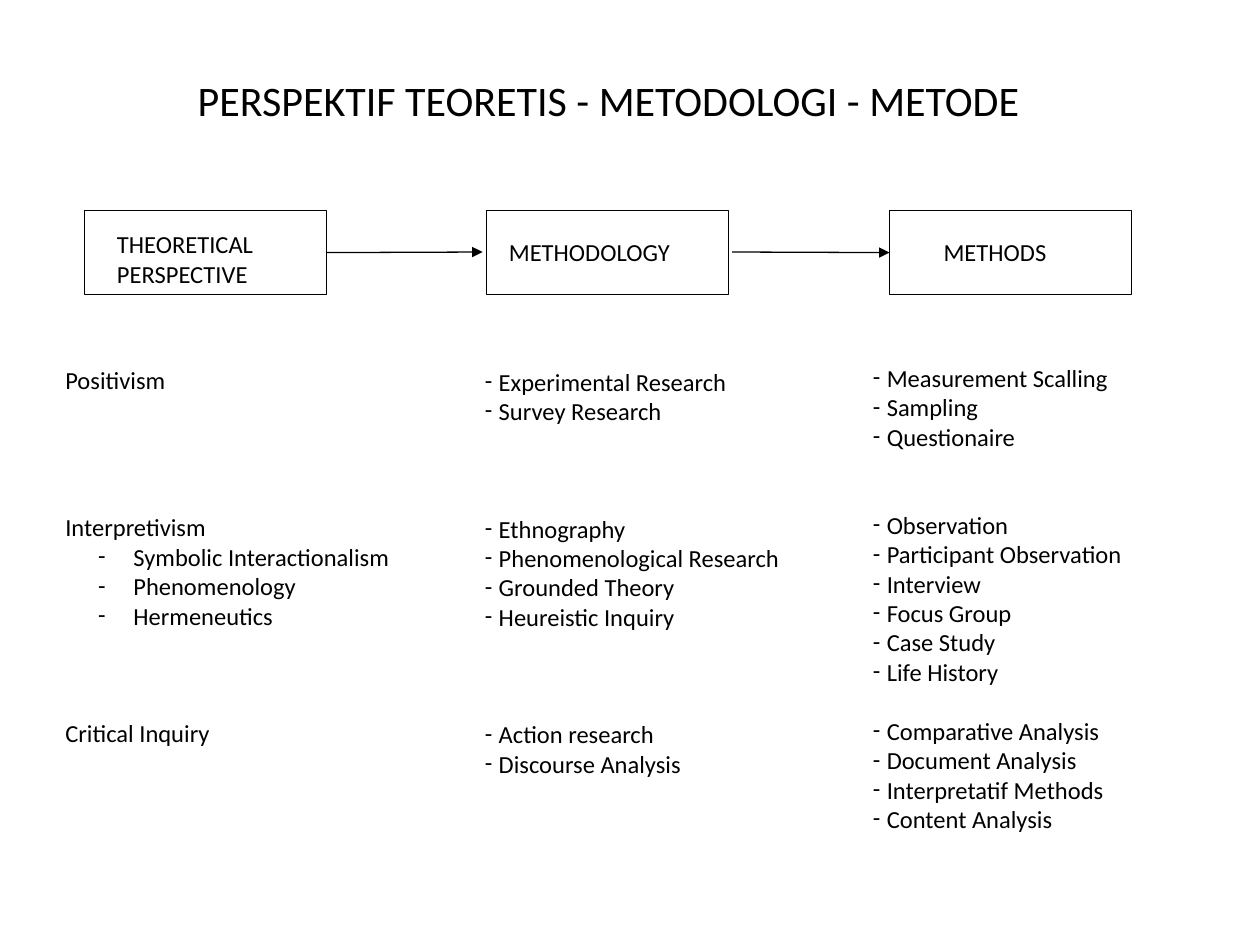
from lxml import etree
from pptx import Presentation
from pptx.dml.color import RGBColor
from pptx.enum.shapes import MSO_CONNECTOR, MSO_SHAPE
from pptx.enum.text import MSO_ANCHOR, PP_ALIGN
from pptx.oxml.ns import qn
from pptx.util import Inches, Pt

STRAIGHT, RECTANGLE = MSO_CONNECTOR.STRAIGHT, MSO_SHAPE.RECTANGLE
MIDDLE, LEFT, CENTER = MSO_ANCHOR.MIDDLE, PP_ALIGN.LEFT, PP_ALIGN.CENTER

TITLE = "PERSPEKTIF TEORETIS - METODOLOGI - METODE"
COLORS = {"ink": "000000"}
FONT = "Calibri"
LINE_PITCH = 16.8  # points taken by one line of 14 pt text

# Hanging indents in inches
PLAIN, DASH, SUB_DASH = 0, 0.11, 0.28
TEXT_MARGINS = {PLAIN: 0, DASH: 0.11, SUB_DASH: 0.54}

# Heading, left of its box, (left, top, height) of its text
HEADINGS = [
    ("THEORETICAL PERSPECTIVE", 0.67, (0.83, 1.77, 0.57)),
    ("METHODOLOGY", 3.86, (3.94, 1.83, 0.33)),
    ("METHODS", 7.06, (7.39, 1.83, 0.33)),
]
BOX_TOP, BOX_WIDTH, BOX_HEIGHT = 1.67, 1.92, 0.67
HEADING_WIDTH = 2.17

# Column place, then groups of (lines left free above, [(indent, text), ...])
COLUMNS = [
    ((0.42, 2.85, 3.02, 3.12), [
        (0, [(PLAIN, "Positivism")]),
        (4, [(PLAIN, "Interpretivism"),
             (SUB_DASH, "Symbolic Interactionalism"),
             (SUB_DASH, "Phenomenology"),
             (SUB_DASH, "Hermeneutics")]),
        (3, [(PLAIN, "Critical Inquiry")]),
    ]),
    ((3.75, 2.86, 2.81, 3.59), [
        (0, [(DASH, "Experimental Research"), (DASH, "Survey Research")]),
        (3, [(DASH, "Ethnography"), (DASH, "Phenomenological Research"),
             (DASH, "Grounded Theory"), (DASH, "Heureistic Inquiry")]),
        (3, [(DASH, "Action research"), (DASH, "Discourse Analysis")]),
    ]),
    ((6.83, 2.83, 2.34, 4.06), [
        (0, [(DASH, "Measurement Scalling"), (DASH, "Sampling"),
             (DASH, "Questionaire")]),
        (2, [(DASH, "Observation"), (DASH, "Participant Observation"),
             (DASH, "Interview"), (DASH, "Focus Group"),
             (DASH, "Case Study"), (DASH, "Life History")]),
        (1, [(DASH, "Comparative Analysis"), (DASH, "Document Analysis"),
             (DASH, "Interpretatif Methods"), (DASH, "Content Analysis")]),
    ]),
]


def color(name):
    return RGBColor.from_string(COLORS[name])


def write(paragraph, text, size=14, align=LEFT, indent=PLAIN, lines_above=0):
    """Fill a paragraph; an indent above zero gives it a hanging dash."""
    paragraph.alignment = align
    paragraph.space_before = Pt(round(lines_above * LINE_PITCH, 2))
    run = paragraph.add_run()
    run.text = text
    run.font.name, run.font.size = FONT, Pt(size)
    run.font.color.rgb = color("ink")
    if indent:
        properties = paragraph._p.get_or_add_pPr()
        properties.set("marL", str(Inches(TEXT_MARGINS[indent])))
        properties.set("indent", str(-Inches(indent)))
        etree.SubElement(properties, qn("a:buFont")).set("typeface", FONT)
        etree.SubElement(properties, qn("a:buChar")).set("char", "-")


def add_text_frame(slide, *place):
    frame = slide.shapes.add_textbox(*map(Inches, place)).text_frame
    frame.word_wrap = True
    return frame


def add_heading(slide, text, box_left, text_place):
    left, top, height = text_place
    frame = add_text_frame(slide, left, top, HEADING_WIDTH, height)
    write(frame.paragraphs[0], text)
    box = slide.shapes.add_shape(RECTANGLE, *map(
        Inches, (box_left, BOX_TOP, BOX_WIDTH, BOX_HEIGHT)))
    box.shadow.inherit = False
    box.fill.background()
    box.line.color.rgb = color("ink")
    box.line.width = Pt(0.75)
    return box


def add_column(slide, place, groups):
    frame = add_text_frame(slide, *place)
    paragraph = frame.paragraphs[0]
    for group_index, (free_lines, entries) in enumerate(groups):
        for index, (indent, text) in enumerate(entries):
            if group_index or index:
                paragraph = frame.add_paragraph()
            write(paragraph, text, indent=indent,
                  lines_above=0 if index else free_lines)


def add_arrow(slide, start, end):
    arrow = slide.shapes.add_connector(
        STRAIGHT, *map(Inches, (start, 2, end, 2)))
    arrow.line.color.rgb = color("ink")
    arrow.line.width = Pt(0.75)
    line = arrow.line._get_or_add_ln()
    etree.SubElement(line, qn("a:tailEnd")).set("type", "triangle")
    etree.SubElement(arrow._element.spPr, qn("a:effectLst"))
    return arrow


def main():
    presentation = Presentation()
    presentation.slide_width, presentation.slide_height = Inches(10), Inches(7.5)
    slide = presentation.slides.add_slide(presentation.slide_layouts[5])

    title = slide.shapes.title
    title.left, title.top, title.width, title.height = map(
        Inches, (0.58, 0.33, 8.5, 0.92))
    title.text_frame.vertical_anchor = MIDDLE
    write(title.text_frame.paragraphs[0], TITLE, size=24, align=CENTER)

    perspective, _, methods = [add_heading(slide, *row) for row in HEADINGS]
    for place, groups in COLUMNS:
        add_column(slide, place, groups)

    add_arrow(slide, 2.59, 3.83).begin_connect(perspective, 3)
    add_arrow(slide, 5.81, 7.06).end_connect(methods, 1)

    presentation.save("out.pptx")


if __name__ == "__main__":
    main()
